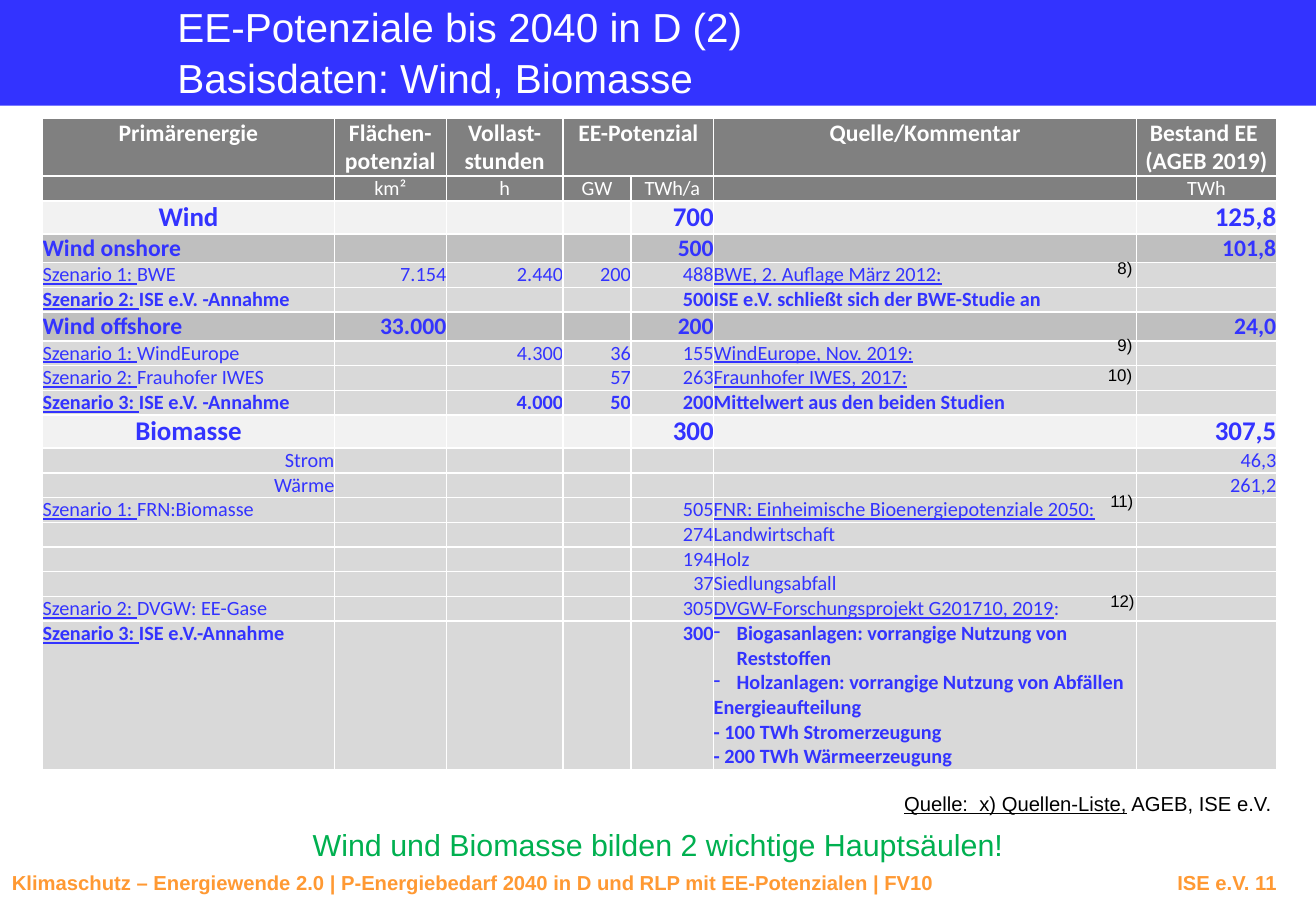
from dataclasses import dataclass
from typing import NamedTuple

from lxml import etree
from pptx import Presentation
from pptx.dml.color import RGBColor
from pptx.enum.shapes import MSO_SHAPE
from pptx.enum.text import PP_ALIGN
from pptx.oxml.ns import qn
from pptx.util import Cm, Pt

LEFT, CENTER, RIGHT = PP_ALIGN.LEFT, PP_ALIGN.CENTER, PP_ALIGN.RIGHT
RECTANGLE = MSO_SHAPE.RECTANGLE


@dataclass(frozen=True)
class Theme:
    body_font: str = "Arial"
    table_font: str = "Calibri"
    white: str = "FFFFFF"
    black: str = "000000"
    blue: str = "3333FF"
    orange: str = "FF9933"
    green: str = "00B050"
    header_fill: str = "808080"
    source_fill: str = "F2F2F2"
    group_fill: str = "BFBFBF"
    detail_fill: str = "D9D9D9"
    title_size: int = 24
    message_size: int = 18
    source_size: int = 16
    group_size: int = 14
    text_size: int = 12
    note_size: int = 10


THEME = Theme()


class TextStyle(NamedTuple):
    size: int
    color: str
    bold: bool = False
    font: str = THEME.body_font


class RowStyle(NamedTuple):
    text: TextStyle
    fill: str
    height: float
    aligns: tuple


class TableRow(NamedTuple):
    style: RowStyle
    cells: dict


class TextBox(NamedTuple):
    left: float
    top: float
    width: float
    height: float
    text: str
    style: TextStyle
    align: int = LEFT
    inset_x: float = 0.25
    inset_y: float = 0.13
    wrap: bool = True
    spacing: float = 1.0


def table_text(size: int, color: str, bold: bool) -> TextStyle:
    return TextStyle(size, color, bold, THEME.table_font)


# Row kinds
ALL_CENTER = (CENTER,) * 7
VALUES = (RIGHT,) * 4 + (LEFT, RIGHT)
HEADER = RowStyle(table_text(THEME.group_size, THEME.white, True), THEME.header_fill, 1.19, ALL_CENTER)
UNITS = RowStyle(table_text(THEME.text_size, THEME.white, False), THEME.header_fill, 0.5, ALL_CENTER)
SOURCE = RowStyle(table_text(THEME.source_size, THEME.blue, True), THEME.source_fill, 0.68, (CENTER,) + VALUES)
GROUP = RowStyle(table_text(THEME.group_size, THEME.blue, True), THEME.group_fill, 0.59, (LEFT,) + VALUES)
DETAIL = RowStyle(table_text(THEME.text_size, THEME.blue, False), THEME.detail_fill, 0.5, (LEFT,) + VALUES)
SHARE = DETAIL._replace(aligns=(RIGHT,) + VALUES)
CHOICE = DETAIL._replace(text=table_text(THEME.text_size, THEME.blue, True))

# Table columns
ENERGY, AREA, HOURS, GIGAWATT, TERAWATT, COMMENT, STOCK = range(7)
COLUMN_WIDTHS = (6.1, 2.34, 2.44, 1.42, 1.73, 8.84, 2.92)

# Underscores enclose underlined text, \v breaks a line, \n starts a paragraph, "* " a dash item
BIOMASS_COMMENT = (
    "* Biogasanlagen: vorrangige Nutzung von Reststoffen\n"
    "* Holzanlagen: vorrangige Nutzung von Abfällen\n"
    "Energieaufteilung\v- 100 TWh Stromerzeugung\v- 200 TWh Wärmeerzeugung"
)
ROWS = (
    TableRow(HEADER, {ENERGY: "Primärenergie", AREA: "Flächen-\vpotenzial", HOURS: "Vollast-\vstunden",
                      GIGAWATT: "EE-Potenzial", COMMENT: "Quelle/Kommentar",
                      STOCK: "Bestand EE \v(AGEB 2019)"}),
    TableRow(UNITS, {AREA: "km²", HOURS: "h", GIGAWATT: "GW", TERAWATT: "TWh/a", STOCK: "TWh"}),
    TableRow(SOURCE, {ENERGY: "Wind", TERAWATT: "700", STOCK: "125,8"}),
    TableRow(GROUP, {ENERGY: "Wind onshore", TERAWATT: "500", STOCK: "101,8"}),
    TableRow(DETAIL, {ENERGY: "_Szenario 1: _BWE", AREA: "7.154", HOURS: "2.440", GIGAWATT: "200",
                      TERAWATT: "488", COMMENT: "_BWE, 2. Auflage März 2012:_"}),
    TableRow(CHOICE, {ENERGY: "_Szenario 2: _ISE e.V. -Annahme", TERAWATT: "500",
                      COMMENT: "ISE e.V. schließt sich der BWE-Studie an"}),
    TableRow(GROUP, {ENERGY: "Wind offshore", AREA: "33.000", TERAWATT: "200", STOCK: "24,0"}),
    TableRow(DETAIL, {ENERGY: "_Szenario 1: _WindEurope", HOURS: "4.300", GIGAWATT: "36", TERAWATT: "155",
                      COMMENT: "_WindEurope, Nov. 2019:_"}),
    TableRow(DETAIL, {ENERGY: "_Szenario 2: _Frauhofer IWES", GIGAWATT: "57", TERAWATT: "263",
                      COMMENT: "_Fraunhofer IWES, 2017:_"}),
    TableRow(CHOICE, {ENERGY: "_Szenario 3: _ISE e.V. -Annahme", HOURS: "4.000", GIGAWATT: "50",
                      TERAWATT: "200", COMMENT: "Mittelwert aus den beiden Studien"}),
    TableRow(SOURCE, {ENERGY: "Biomasse", TERAWATT: "300", STOCK: "307,5"}),
    TableRow(SHARE, {ENERGY: "Strom", STOCK: "46,3"}),
    TableRow(SHARE, {ENERGY: "Wärme", STOCK: "261,2"}),
    TableRow(DETAIL, {ENERGY: "_Szenario 1: _FRN:Biomasse", TERAWATT: "505",
                      COMMENT: "_FNR: Einheimische Bioenergiepotenziale 2050:_"}),
    TableRow(DETAIL, {TERAWATT: "274", COMMENT: "Landwirtschaft"}),
    TableRow(DETAIL, {TERAWATT: "194", COMMENT: "Holz"}),
    TableRow(DETAIL, {TERAWATT: "37", COMMENT: "Siedlungsabfall"}),
    TableRow(DETAIL, {ENERGY: "_Szenario 2: _DVGW: EE-Gase", TERAWATT: "305",
                      COMMENT: "_DVGW-Forschungsprojekt G201710, 2019_:"}),
    TableRow(CHOICE._replace(height=3.03), {ENERGY: "_Szenario 3: _ISE e.V.-Annahme", TERAWATT: "300",
                                            COMMENT: BIOMASS_COMMENT}),
)

# Texts around the table
BLACK_TEXT = TextStyle(THEME.text_size, THEME.black)
TITLE = TextBox(3.71, 0, 20.73, 2.06, "EE-Potenziale bis 2040 in D (2)\vBasisdaten: Wind, Biomasse",
                TextStyle(THEME.title_size, THEME.white), inset_x=0, inset_y=0, spacing=1.05)
SOURCES = TextBox(18.9, 16.54, 7.75, 0.51, "_Quelle:  x) Quellen-Liste,_ AGEB, ISE e.V.", BLACK_TEXT,
                  inset_x=0, inset_y=0, wrap=False)
MESSAGE = TextBox(0, 17.09, 27.51, 1.12, "Wind und Biomasse bilden 2 wichtige Hauptsäulen!",
                  TextStyle(THEME.message_size, THEME.green), CENTER, 0.18, 0.18)
FOOTER = TextBox(0, 18.06, 27.51, 0.75, "Klimaschutz – Energiewende 2.0 | P-Energiebedarf 2040 in D und RLP "
                 "mit EE-Potenzialen | FV10\tISE e.V. 11", TextStyle(THEME.text_size, THEME.orange, True))
NOTE_PLACES = (("8)", 23.11, 5.26), ("9)", 23.11, 6.86), ("10)", 22.91, 7.49),
               ("11)", 22.96, 10.13), ("12)", 22.96, 12.22))


def write_text(frame, text: str, style: TextStyle, align: int, spacing: float = 1.0) -> None:
    for index, line in enumerate(text.split("\n")):
        paragraph = frame.add_paragraph() if index else frame.paragraphs[0]
        paragraph.alignment, paragraph.line_spacing = align, spacing
        properties = paragraph._p.get_or_add_pPr()
        if line.startswith("* "):
            properties.set("marL", str(Cm(0.48)))
            properties.set("indent", str(-Cm(0.48)))
            etree.SubElement(properties, qn("a:buChar"), char="-")
        if "\t" in line:
            tabs = etree.SubElement(properties, qn("a:tabLst"))
            etree.SubElement(tabs, qn("a:tab"), pos=str(Cm(26.44)), algn="r")
        for part, span in enumerate(line.removeprefix("* ").split("_")):
            for piece, words in enumerate(span.split("\v")):
                if piece:
                    paragraph.add_line_break()
                if words:
                    run = paragraph.add_run()
                    run.text = words
                    run.font.name, run.font.size, run.font.bold = style.font, Pt(style.size), style.bold
                    run.font.underline = part % 2 == 1
                    run.font.color.rgb = RGBColor.from_string(style.color)
        # The end mark keeps empty cells as low as their row
        etree.SubElement(paragraph._p, qn("a:endParaRPr"), sz=str(style.size * 100))


def set_insets(target, inset_x: float, inset_y: float) -> None:
    target.margin_left = target.margin_right = Cm(inset_x)
    target.margin_top = target.margin_bottom = Cm(inset_y)


def draw_text_box(slide, box: TextBox) -> None:
    frame = slide.shapes.add_textbox(Cm(box.left), Cm(box.top), Cm(box.width), Cm(box.height)).text_frame
    frame.word_wrap = box.wrap
    set_insets(frame, box.inset_x, box.inset_y)
    write_text(frame, box.text, box.style, box.align, box.spacing)


def draw_cell(cell, text: str, style: RowStyle, align: int) -> None:
    set_insets(cell, 0, 0)
    write_text(cell.text_frame, text, style.text, align)
    for side in ("lnL", "lnR", "lnT", "lnB"):
        line = etree.SubElement(cell._tc.get_or_add_tcPr(), qn(f"a:{side}"), w=str(Pt(1)))
        fill = etree.SubElement(line, qn("a:solidFill"))
        etree.SubElement(fill, qn("a:srgbClr"), val=THEME.white)
    cell.fill.solid()
    cell.fill.fore_color.rgb = RGBColor.from_string(style.fill)


def draw_potential_table(slide) -> None:
    height = sum(row.style.height for row in ROWS)
    table = slide.shapes.add_table(len(ROWS), len(COLUMN_WIDTHS), Cm(0.89), Cm(2.48),
                                   Cm(sum(COLUMN_WIDTHS)), Cm(height)).table
    table.first_row = table.horz_banding = False
    for column, width in zip(table.columns, COLUMN_WIDTHS):
        column.width = Cm(width)
    for index, row in enumerate(ROWS):
        table.rows[index].height = Cm(row.style.height)
        for column, align in enumerate(row.style.aligns):
            draw_cell(table.cell(index, column), row.cells.get(column, ""), row.style, align)
    table.cell(0, GIGAWATT).merge(table.cell(0, TERAWATT))


def main() -> None:
    deck = Presentation()
    deck.slide_width, deck.slide_height = Cm(27.51), Cm(19.05)
    slide = deck.slides.add_slide(deck.slide_layouts[6])

    # Title band
    band = slide.shapes.add_shape(RECTANGLE, 0, 0, deck.slide_width, Cm(2.21))
    band.shadow.inherit = False
    band.fill.solid()
    band.fill.fore_color.rgb = RGBColor.from_string(THEME.blue)
    band.line.fill.background()

    # Table with its footnote marks, then the framing texts
    draw_potential_table(slide)
    notes = [TextBox(left, top, 0.84 if len(mark) == 2 else 1.02, 0.69, mark,
                     TextStyle(THEME.note_size, THEME.black), wrap=False) for mark, left, top in NOTE_PLACES]
    for box in (TITLE, SOURCES, MESSAGE, FOOTER, *notes):
        draw_text_box(slide, box)
    deck.save("out.pptx")


if __name__ == "__main__":
    main()
